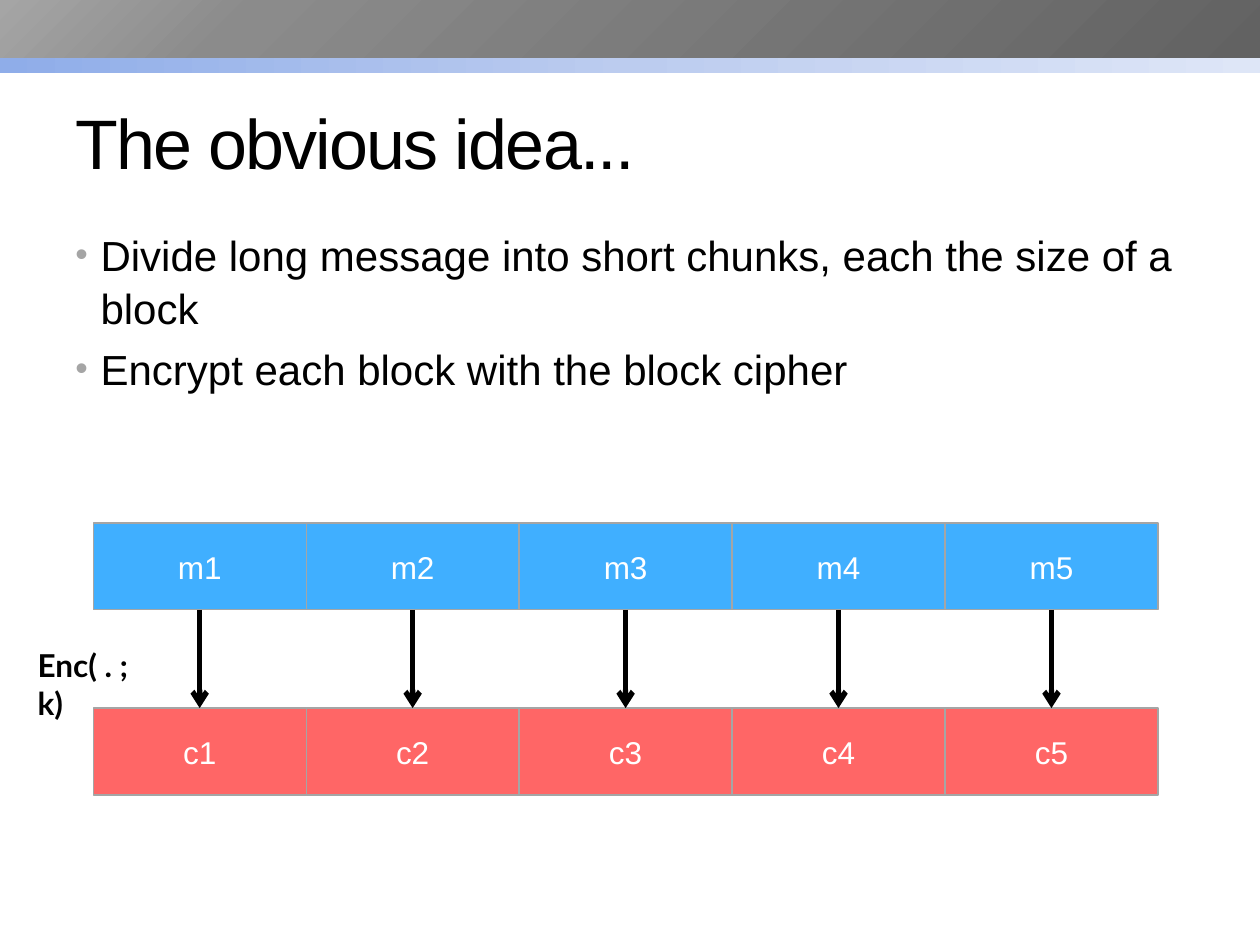
from lxml.etree import SubElement
from pptx import Presentation
from pptx.dml.color import RGBColor
from pptx.enum.shapes import MSO_CONNECTOR, MSO_SHAPE
from pptx.enum.text import MSO_ANCHOR as Anchor, PP_ALIGN as Align
from pptx.oxml import parse_xml
from pptx.oxml.ns import nsdecls, qn
from pptx.util import Inches, Pt

# Content
TITLE = "The obvious idea..."
BULLETS = [
    "Divide long message into short chunks, each the size of a block",
    "Encrypt each block with the block cipher",
]
MESSAGE = ["m1", "m2", "m3", "m4", "m5"]
CIPHER = ["c1", "c2", "c3", "c4", "c5"]
LABEL = "Enc( . ; k)"
COLORS = {
    "text": "000000", "light": "FFFFFF", "gray": "A5A5A5",
    "message": "40AFFF", "cipher": "FF6666",
}
# top, height, angle in degrees, gradient stops
BANDS = [
    (0.24, 0.34, 0, [(0, "8FADE9"), (50, "BCCCEF"), (100, "DEE6F7")]),
    (0, 0.46, 225, [(0, "626262"), (80, "8B8B8B"), (100, "A5A5A5")]),
]

# Block grid
LEFT, BLOCK_W, BLOCK_H = 0.74, 1.69, 0.69
MESSAGE_TOP, CIPHER_TOP = 4.15, 5.62


def color(name):
    return RGBColor.from_string(COLORS[name])


def add_span(para, text, size, name="text", font="Arial", bold=False):
    span = para.add_run()
    span.text = text
    span.font.size = Pt(size)
    span.font.name = font
    span.font.bold = bold
    span.font.color.rgb = color(name)
    return span


def add_rect(page, left, top, width, height):
    rect = page.shapes.add_shape(
        MSO_SHAPE.RECTANGLE, Inches(left), Inches(top), Inches(width), Inches(height))
    rect.shadow.inherit = False
    return rect


def add_text_box(page, left, top, width, height):
    box = page.shapes.add_textbox(
        Inches(left), Inches(top), Inches(width), Inches(height))
    box.text_frame.word_wrap = True
    return box.text_frame


def add_band(page, top, height, angle, stops):
    band = add_rect(page, 0, top, 10, height)
    band.line.fill.background()
    marks = "".join(
        f'<a:gs pos="{pos * 1000}"><a:srgbClr val="{value}"/></a:gs>'
        for pos, value in stops)
    gradient = parse_xml(
        f'<a:gradFill {nsdecls("a")}><a:gsLst>{marks}</a:gsLst>'
        f'<a:lin ang="{angle * 60000}" scaled="0"/></a:gradFill>')
    band._element.spPr.find(qn("a:prstGeom")).addnext(gradient)


def add_bullet(para):
    props = para._p.get_or_add_pPr()
    props.set("marL", str(Inches(0.2)))
    props.set("indent", str(-Inches(0.2)))
    tint = SubElement(props, qn("a:buClr"))
    SubElement(tint, qn("a:srgbClr"), val=COLORS["gray"])
    SubElement(props, qn("a:buSzPct"), val="85000")
    SubElement(props, qn("a:buFont"), typeface="Arial")
    SubElement(props, qn("a:buChar"), char="•")


def add_blocks(page, names, top, fill):
    for i, name in enumerate(names):
        block = add_rect(page, LEFT + i * BLOCK_W, top, BLOCK_W, BLOCK_H)
        block.fill.solid()
        block.fill.fore_color.rgb = color(fill)
        block.line.color.rgb = color("gray")
        block.line.width = Pt(0.75)
        block.text_frame.vertical_anchor = Anchor.MIDDLE
        para = block.text_frame.paragraphs[0]
        para.alignment = Align.CENTER
        add_span(para, name, 18, "light")


def add_arrow(page, x, top, bottom):
    arrow = page.shapes.add_connector(
        MSO_CONNECTOR.STRAIGHT, Inches(x), Inches(top), Inches(x), Inches(bottom))
    arrow.line.color.rgb = color("text")
    arrow.line.width = Pt(3)
    SubElement(arrow.line._get_or_add_ln(), qn("a:tailEnd"), type="arrow")
    SubElement(arrow._element.spPr, qn("a:effectLst"))


def main():
    deck = Presentation()
    deck.slide_width, deck.slide_height = Inches(10), Inches(7.5)
    page = deck.slides.add_slide(deck.slide_layouts[6])

    # Header bands
    for band in BANDS:
        add_band(page, *band)

    # Title
    frame = add_text_box(page, 0.5, 0.58, 9, 1.08)
    frame.vertical_anchor = Anchor.MIDDLE
    span = add_span(frame.paragraphs[0], TITLE, 40)
    span.font._element.set("spc", "-100")

    # Bullets
    frame = add_text_box(page, 0.5, 1.75, 9, 5.33)
    for i, text in enumerate(BULLETS):
        para = frame.add_paragraph() if i else frame.paragraphs[0]
        para.space_before = Pt(4.8)
        para.line_spacing = 1.05
        add_bullet(para)
        add_span(para, text, 24)

    # Message blocks encrypted into cipher blocks
    add_blocks(page, MESSAGE, MESSAGE_TOP, "message")
    add_blocks(page, CIPHER, CIPHER_TOP, "cipher")
    for i in range(len(MESSAGE)):
        add_arrow(page, LEFT + (i + 0.5) * BLOCK_W, MESSAGE_TOP + BLOCK_H, CIPHER_TOP)

    # Encryption label
    frame = add_text_box(page, 0.2, 5.08, 1.12, 0.4)
    add_span(frame.paragraphs[0], LABEL, 18, font="Lato", bold=True)

    deck.save("out.pptx")


if __name__ == "__main__":
    main()
